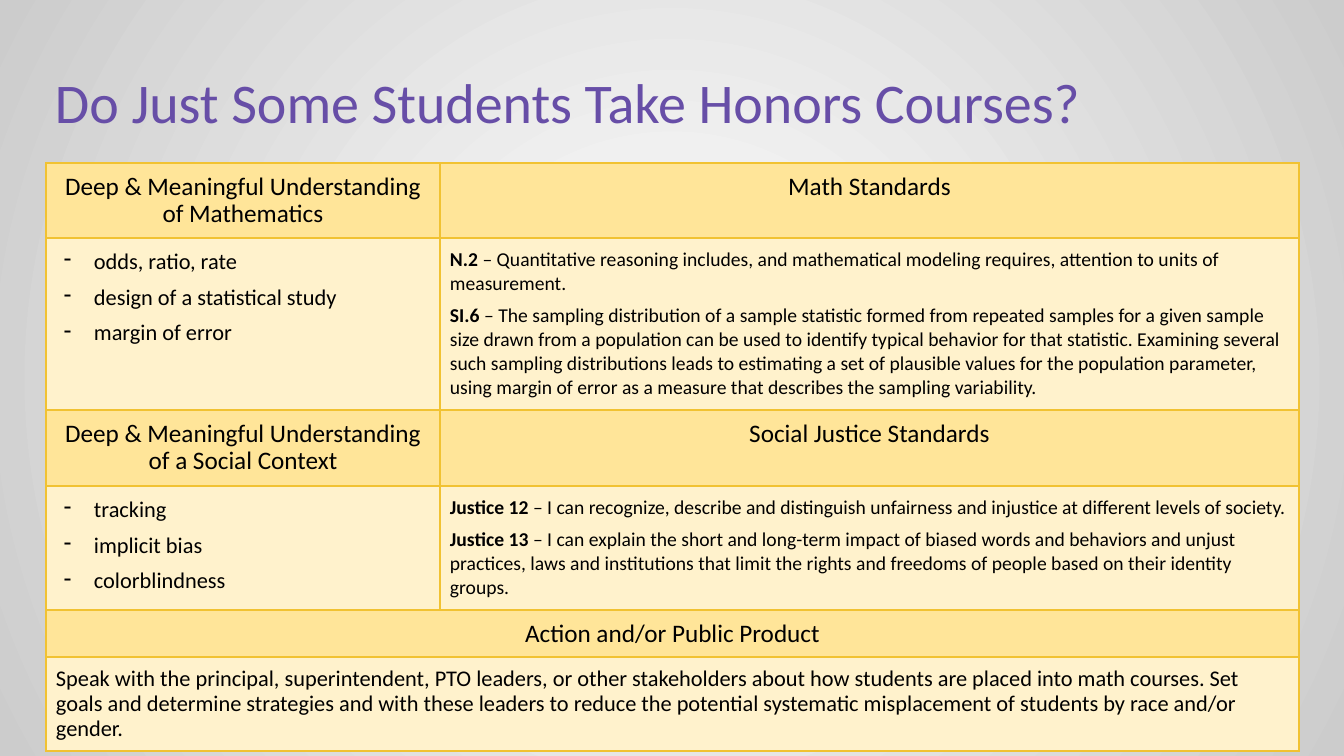
from dataclasses import dataclass

from lxml import etree
from pptx import Presentation
from pptx import util as u
from pptx.dml.color import RGBColor
from pptx.enum import text
from pptx.oxml import parse_xml
from pptx.oxml.ns import nsdecls, qn

PX_PER_INCH = 100.8
FONT = "Calibri"
BLACK, PURPLE, GOLD = "000000", "674EA7", "F1C232"
HEADING_FILL, BODY_FILL = "FFE599", "FFF2CC"
WHITE, GREY = "FFFFFF", "CCCCCC"
INSET = 10
COLUMN_WIDTHS = (394, 859)
ROW_HEIGHTS = (75, 172, 76, 124, 47, 94)


@dataclass(frozen=True)
class Line:
    body: str
    label: str = ""
    before: int = 0
    after: int = 0


@dataclass(frozen=True)
class CellContent:
    lines: list[Line]
    size: int
    fill: str = BODY_FILL
    centred: bool = False
    bulleted: bool = False
    spacing: float = 1.0


def px(length: int) -> int:
    return u.Inches(length / PX_PER_INCH)


def colour(value: str) -> RGBColor:
    return RGBColor.from_string(value)


def heading(words: str) -> CellContent:
    return CellContent([Line(words)], 18, HEADING_FILL, centred=True, spacing=0.9)


def topics(*names: str) -> CellContent:
    last = len(names) - 1
    lines = [Line(name, before=6 if i else 0, after=6 if i == last else 0)
             for i, name in enumerate(names)]
    return CellContent(lines, 16, bulleted=True)


def standards(first: tuple[str, str], second: tuple[str, str]) -> CellContent:
    lines = [Line(f" – {first[1]}", first[0]),
             Line(f" – {second[1]}", second[0], before=6, after=3)]
    return CellContent(lines, 14)


ROWS = [
    [heading("Deep & Meaningful Understanding of Mathematics"),
     heading("Math Standards")],
    [topics("odds, ratio, rate", "design of a statistical study", "margin of error"),
     standards(
         ("N.2", "Quantitative reasoning includes, and mathematical modeling requires, "
                 "attention to units of measurement."),
         ("SI.6", "The sampling distribution of a sample statistic formed from repeated "
                  "samples for a given sample size drawn from a population can be used to "
                  "identify typical behavior for that statistic. Examining several such "
                  "sampling distributions leads to estimating a set of plausible values for "
                  "the population parameter, using margin of error as a measure that "
                  "describes the sampling variability."))],
    [heading("Deep & Meaningful Understanding of a Social Context"),
     heading("Social Justice Standards")],
    [topics("tracking", "implicit bias", "colorblindness"),
     standards(
         ("Justice 12", "I can recognize, describe and distinguish unfairness and "
                        "injustice at different levels of society."),
         ("Justice 13", "I can explain the short and long-term impact of biased words and "
                        "behaviors and unjust practices, laws and institutions that limit "
                        "the rights and freedoms of people based on their identity groups."))],
    [heading("Action and/or Public Product")],
    [CellContent([Line(
        "Speak with the principal, superintendent, PTO leaders, or other stakeholders about "
        "how students are placed into math courses. Set goals and determine strategies and "
        "with these leaders to reduce the potential systematic misplacement of students by "
        "race and/or gender.")], 16, spacing=0.9)],
]


def style_run(run, size: int, value: str, bold: bool = False) -> None:
    run.font.name = FONT
    run.font.size = u.Pt(size)
    run.font.bold = bold
    run.font.color.rgb = colour(value)


def add_dash(paragraph) -> None:
    properties = paragraph._p.get_or_add_pPr()
    properties.set("marL", str(px(38)))
    properties.set("indent", str(px(-30)))
    bullet_colour = etree.SubElement(properties, qn("a:buClr"))
    etree.SubElement(bullet_colour, qn("a:srgbClr"), val=BLACK)
    etree.SubElement(properties, qn("a:buChar"), char="-")


def set_insets(holder) -> None:
    holder.margin_left = holder.margin_right = px(INSET)
    holder.margin_top = holder.margin_bottom = px(INSET)


def add_borders(cell) -> None:
    properties = cell._tc.get_or_add_tcPr()
    for side in "LRTB":
        properties.append(parse_xml(
            f'<a:ln{side} {nsdecls("a")} w="{u.Pt(1.5)}"><a:solidFill>'
            f'<a:srgbClr val="{GOLD}"/></a:solidFill></a:ln{side}>'))


def fill_cell(cell, content: CellContent) -> None:
    cell.fill.solid()
    cell.fill.fore_color.rgb = colour(content.fill)
    set_insets(cell)
    frame = cell.text_frame
    frame.text = "\n".join(line.label or line.body for line in content.lines)
    for paragraph, line in zip(frame.paragraphs, content.lines):
        paragraph.line_spacing = content.spacing
        paragraph.space_before = u.Pt(line.before)
        paragraph.space_after = u.Pt(line.after)
        if content.centred:
            paragraph.alignment = text.PP_ALIGN.CENTER
        if content.bulleted:
            add_dash(paragraph)
        style_run(paragraph.runs[0], content.size, BLACK, bold=bool(line.label))
        if line.label:
            run = paragraph.add_run()
            run.text = line.body
            style_run(run, content.size, BLACK)


def add_background(slide) -> None:
    """Radial gradient, white in the middle and grey at the corners."""
    fill = slide.background.fill
    fill.gradient()
    for stop, value, position in zip(fill.gradient_stops, (WHITE, GREY), (0, 1)):
        stop.color.rgb = colour(value)
        stop.position = position
    gradient = slide.element.find(".//" + qn("a:gradFill"))
    gradient.replace(gradient.find(qn("a:lin")), parse_xml(
        f'<a:path {nsdecls("a")} path="circle">'
        '<a:fillToRect l="50000" t="50000" r="50000" b="50000"/></a:path>'))


def add_title(slide) -> None:
    title = slide.shapes.add_textbox(px(45), px(65), px(1252), px(84))
    frame = title.text_frame
    frame.word_wrap = True
    set_insets(frame)
    frame.text = "Do Just Some Students Take Honors Courses?"
    paragraph = frame.paragraphs[0]
    paragraph.line_spacing = 0.9
    style_run(paragraph.runs[0], 40, PURPLE)


def add_standards_table(slide) -> None:
    table = slide.shapes.add_table(
        len(ROWS), len(COLUMN_WIDTHS), px(46), px(163),
        px(sum(COLUMN_WIDTHS)), px(sum(ROW_HEIGHTS))).table
    table.first_row = table.horz_banding = False
    for column, width in zip(table.columns, COLUMN_WIDTHS):
        column.width = px(width)
    for row, height in zip(table.rows, ROW_HEIGHTS):
        row.height = px(height)
    for cell in table.iter_cells():
        add_borders(cell)
    for index, contents in enumerate(ROWS):
        if len(contents) == 1:
            table.cell(index, 0).merge(table.cell(index, 1))
        for column, content in enumerate(contents):
            fill_cell(table.cell(index, column), content)


def main() -> None:
    presentation = Presentation()
    presentation.slide_width, presentation.slide_height = px(1344), px(756)
    slide = presentation.slides.add_slide(presentation.slide_layouts[6])
    add_background(slide)
    add_title(slide)
    add_standards_table(slide)
    presentation.save("out.pptx")


if __name__ == "__main__":
    main()
